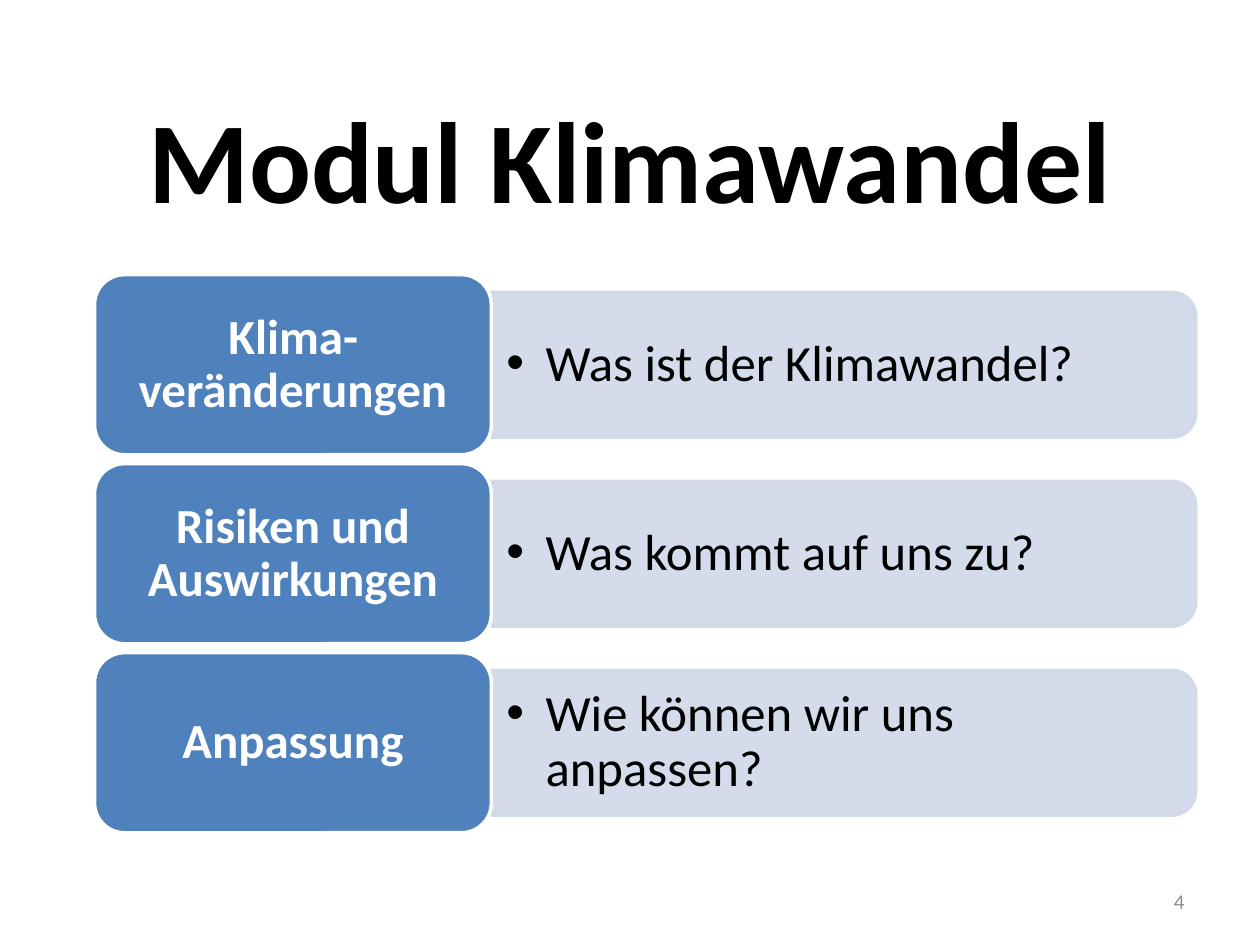
from dataclasses import dataclass

from lxml.etree import SubElement
from pptx import Presentation
from pptx.dml.color import RGBColor
from pptx.enum.shapes import MSO_SHAPE as Shape
from pptx.enum.text import MSO_ANCHOR as Anchor, PP_ALIGN as Align
from pptx.oxml.ns import qn
from pptx.util import Inches, Pt


@dataclass(frozen=True)
class Theme:
    font: str = "Calibri"
    ink: str = "000000"
    card: str = "4F81BD"
    panel: str = "D0D8E8"
    light: str = "FFFFFF"
    muted: str = "8C8C8C"
    title_size: int = 66
    card_size: int = 28
    question_size: int = 29
    number_size: int = 12
    line_width: int = 2
    panel_opacity: int = 90


THEME = Theme()

TOPICS = [
    ("Klima-veränderungen", "Was ist der Klimawandel?"),
    ("Risiken und Auswirkungen", "Was kommt auf uns zu?"),
    ("Anpassung", "Wie können wir uns anpassen?"),
]

LEFT, FIRST_TOP, PITCH = 0.75, 2.18, 1.5
CARD_WIDTH, CARD_HEIGHT = 3.15, 1.43
PANEL_WIDTH, PANEL_HEIGHT = 5.59, 1.15
QUESTION_WIDTH, QUESTION_HEIGHT = 5.54, 1.03


def write_text(shape, text, size, color, align=Align.LEFT, bold=False):
    frame = shape.text_frame
    frame.text = text
    frame.word_wrap = True
    frame.vertical_anchor = Anchor.MIDDLE
    para = frame.paragraphs[0]
    para.alignment = align
    font = para.runs[0].font
    font.name, font.size, font.bold = THEME.font, Pt(size), bold
    font.color.rgb = RGBColor.from_string(color)
    return para


def tighten(shape, para):
    frame = shape.text_frame
    frame.margin_left = frame.margin_right = Inches(0.12)
    frame.margin_top = frame.margin_bottom = Inches(0.06)
    para.line_spacing = 0.9


def add_box(page, left, top, width, height):
    return page.shapes.add_textbox(
        Inches(left), Inches(top), Inches(width), Inches(height)
    )


def add_filled(page, kind, left, top, width, height, fill, line):
    shape = page.shapes.add_shape(
        kind, Inches(left), Inches(top), Inches(width), Inches(height)
    )
    shape.shadow.inherit = False
    shape.fill.solid()
    shape.fill.fore_color.rgb = RGBColor.from_string(fill)
    shape.line.color.rgb = RGBColor.from_string(line)
    shape.line.width = Pt(THEME.line_width)
    return shape


def add_panel(page, left, middle):
    panel = add_filled(
        page, Shape.ROUND_2_SAME_RECTANGLE,
        left + (PANEL_WIDTH - PANEL_HEIGHT) / 2, middle - PANEL_WIDTH / 2,
        PANEL_HEIGHT, PANEL_WIDTH, THEME.panel, THEME.panel,
    )
    panel.rotation = 90
    for color in panel.element.spPr.iter(qn("a:srgbClr")):
        SubElement(color, qn("a:alpha"), val=str(THEME.panel_opacity * 1000))


def add_question(page, left, middle, text):
    box = add_box(
        page, left, middle - QUESTION_HEIGHT / 2, QUESTION_WIDTH, QUESTION_HEIGHT
    )
    para = write_text(box, text, THEME.question_size, THEME.ink)
    tighten(box, para)
    indent = Inches(0.31)
    properties = para._p.get_or_add_pPr()
    properties.set("marL", str(indent))
    properties.set("indent", str(-indent))
    SubElement(properties, qn("a:buFont"), typeface="Arial")
    SubElement(properties, qn("a:buChar"), char="•")


def add_card(page, top, text):
    card = add_filled(
        page, Shape.ROUNDED_RECTANGLE, LEFT, top, CARD_WIDTH, CARD_HEIGHT,
        THEME.card, THEME.light,
    )
    para = write_text(
        card, text, THEME.card_size, THEME.light, Align.CENTER, bold=True
    )
    tighten(card, para)


def add_topic(page, top, heading, question):
    middle = top + CARD_HEIGHT / 2
    panel_left = LEFT + CARD_WIDTH
    add_panel(page, panel_left, middle)
    add_question(page, panel_left, middle, question)
    add_card(page, top, heading)


def main():
    deck = Presentation()
    deck.slide_width, deck.slide_height = Inches(10), Inches(7.5)
    page = deck.slides.add_slide(deck.slide_layouts[6])

    title = add_box(page, 0.75, 0.44, 8.5, 1.61)
    write_text(
        title, "Modul Klimawandel", THEME.title_size, THEME.ink,
        Align.CENTER, bold=True,
    )
    for index, (heading, question) in enumerate(TOPICS):
        add_topic(page, FIRST_TOP + index * PITCH, heading, question)
    number = add_box(page, 7.17, 6.95, 2.33, 0.4)
    write_text(number, "4", THEME.number_size, THEME.muted, Align.RIGHT)

    deck.save("out.pptx")


if __name__ == "__main__":
    main()
